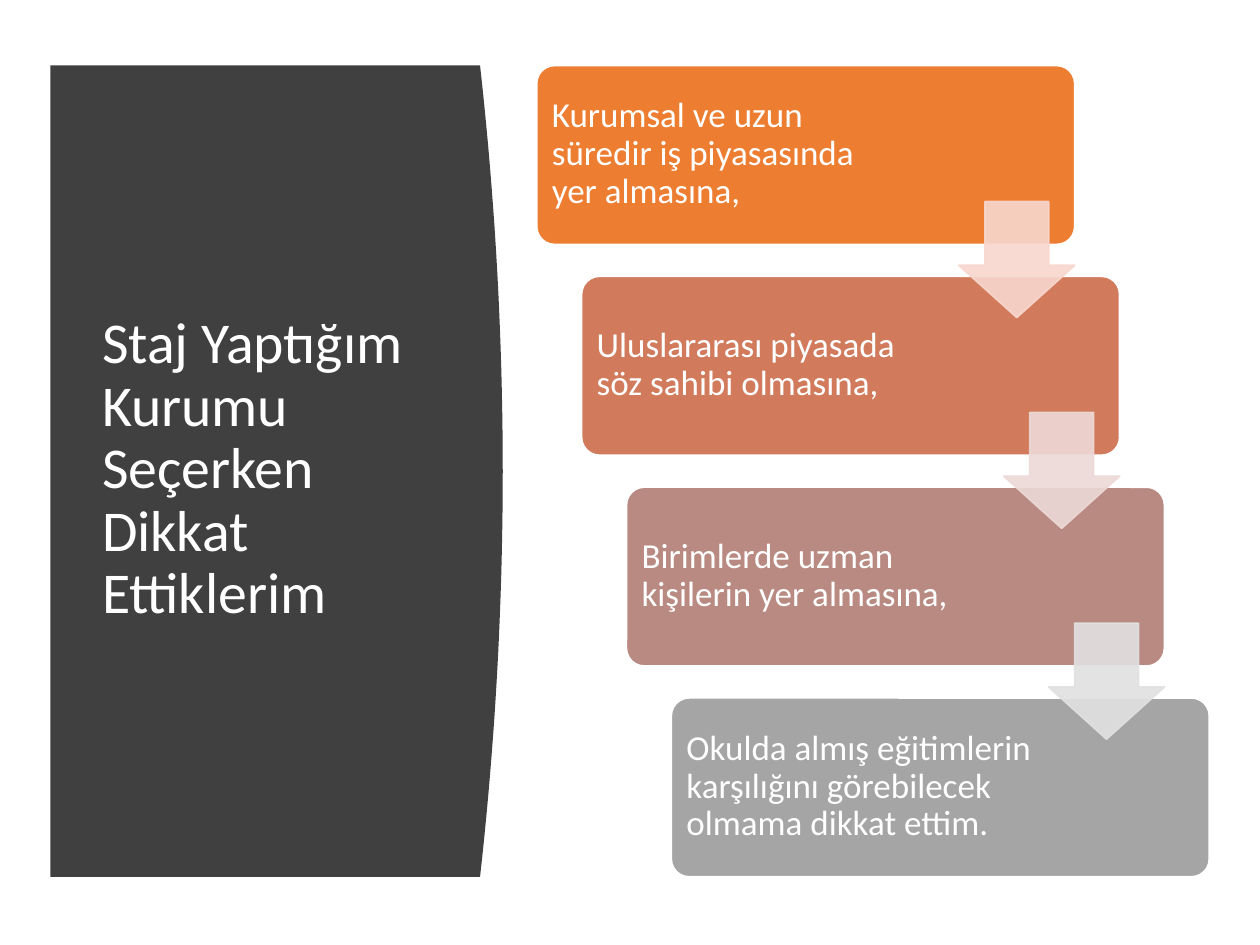
from lxml import etree
from pptx import Presentation
from pptx.dml.color import RGBColor
from pptx.enum.shapes import MSO_SHAPE
from pptx.enum.text import MSO_ANCHOR, MSO_AUTO_SIZE, PP_ALIGN
from pptx.oxml.ns import qn
from pptx.util import Inches, Pt

ROUNDED = MSO_SHAPE.ROUNDED_RECTANGLE
DOWN_ARROW = MSO_SHAPE.DOWN_ARROW
MIDDLE = MSO_ANCHOR.MIDDLE
LEFT = PP_ALIGN.LEFT
NO_FIT = MSO_AUTO_SIZE.NONE

FONT = "Calibri"
WHITE = "FFFFFF"
PANEL_COLOR = "404040"

# Text, text width, card colour, colour of the arrow to the next card
STEPS = [
    ("Kurumsal ve uzun süredir iş piyasasında yer almasına,", 2.63, "ED7D31", "F8D7CE"),
    ("Uluslararası piyasada söz sahibi olmasına,", 2.91, "D17B5C", "EDD9D7"),
    ("Birimlerde uzman kişilerin yer almasına,", 2.92, "B98A82", "E1E1E1"),
    ("Okulda almış eğitimlerin karşılığını görebilecek olmama dikkat ettim.",
     2.91, "A5A5A5", None),
]
CARD_LEFT, CARD_TOP, CARD_W, CARD_H = 4.26, 0.52, 4.27, 1.42
STEP_X, STEP_Y = 0.356, 1.673
ARROW_SIZE = 0.92


def rgb(value):
    return RGBColor.from_string(value)


def set_alpha(color_format_parent, percent):
    for color in color_format_parent.iter(qn("a:srgbClr")):
        etree.SubElement(color, qn("a:alpha")).set("val", str(percent * 1000))


def paint(s, fill, line=None):
    s.shadow.inherit = False
    s.fill.solid()
    s.fill.fore_color.rgb = rgb(fill)
    if line:
        s.line.color.rgb = rgb(line)
        s.line.width = Pt(1)
    else:
        s.line.fill.background()


def write(s, text, size, inset=None):
    tf = s.text_frame
    tf.word_wrap = True
    tf.auto_size = NO_FIT
    tf.vertical_anchor = MIDDLE
    if inset is not None:
        tf.margin_left = tf.margin_right = Inches(inset)
        tf.margin_top = tf.margin_bottom = Inches(inset)
    p = tf.paragraphs[0]
    p.alignment = LEFT
    p.line_spacing = 0.9
    r = p.add_run()
    r.text = text
    r.font.name = FONT
    r.font.size = Pt(size)
    r.font.color.rgb = rgb(WHITE)


def add_panel(slide):
    """Dark panel whose right edge bulges as a parabola."""
    left, top, bottom, side, bulge = 0.4, 0.52, 6.96, 3.81, 0.18
    segments = 40
    edge = []
    for i in range(segments + 1):
        t = i / segments
        x = side + bulge * 4 * t * (1 - t)
        edge.append((Inches(x), Inches(top + (bottom - top) * t)))
    builder = slide.shapes.build_freeform(Inches(left), Inches(top))
    builder.add_line_segments(edge + [(Inches(left), Inches(bottom))], close=True)
    paint(builder.convert_to_shape(), PANEL_COLOR)


def add_title(slide, text):
    s = slide.shapes.title
    s.left, s.top = Inches(0.71), Inches(1.11)
    s.width, s.height = Inches(2.8), Inches(5.24)
    write(s, text, 33)
    # Bring the title in front of the panel
    slide.shapes._spTree.append(s._element)


def add_card(slide, x, y, text, text_width, color):
    s = slide.shapes.add_shape(ROUNDED, Inches(x), Inches(y), Inches(CARD_W), Inches(CARD_H))
    s.adjustments[0] = 0.1
    paint(s, color, WHITE)
    box = slide.shapes.add_textbox(Inches(x + 0.04), Inches(y + 0.04),
                                   Inches(text_width), Inches(1.33))
    write(box, text, 20, inset=0.08)


def add_arrow(slide, x, y, color):
    s = slide.shapes.add_shape(DOWN_ARROW, Inches(x), Inches(y),
                               Inches(ARROW_SIZE), Inches(ARROW_SIZE))
    s.adjustments[0] = 0.55
    s.adjustments[1] = 0.45
    paint(s, color, color)
    set_alpha(s._element.spPr, 90)


def main():
    prs = Presentation()
    prs.slide_width, prs.slide_height = Inches(10), Inches(7.5)
    slide = prs.slides.add_slide(prs.slide_layouts[5])

    # Left side: panel and title
    add_panel(slide)
    add_title(slide, "Staj Yaptığım Kurumu Seçerken Dikkat Ettiklerim")

    # Right side: staircase of cards
    for i, (text, text_width, color, _) in enumerate(STEPS):
        add_card(slide, CARD_LEFT + i * STEP_X, CARD_TOP + i * STEP_Y,
                 text, text_width, color)

    # Arrows lie over the cards, flush with each card's right edge
    for i, (_, _, _, color) in enumerate(STEPS[:-1]):
        add_arrow(slide, CARD_LEFT + CARD_W - ARROW_SIZE + i * STEP_X,
                  1.6 + i * STEP_Y, color)

    prs.save("out.pptx")


if __name__ == "__main__":
    main()
